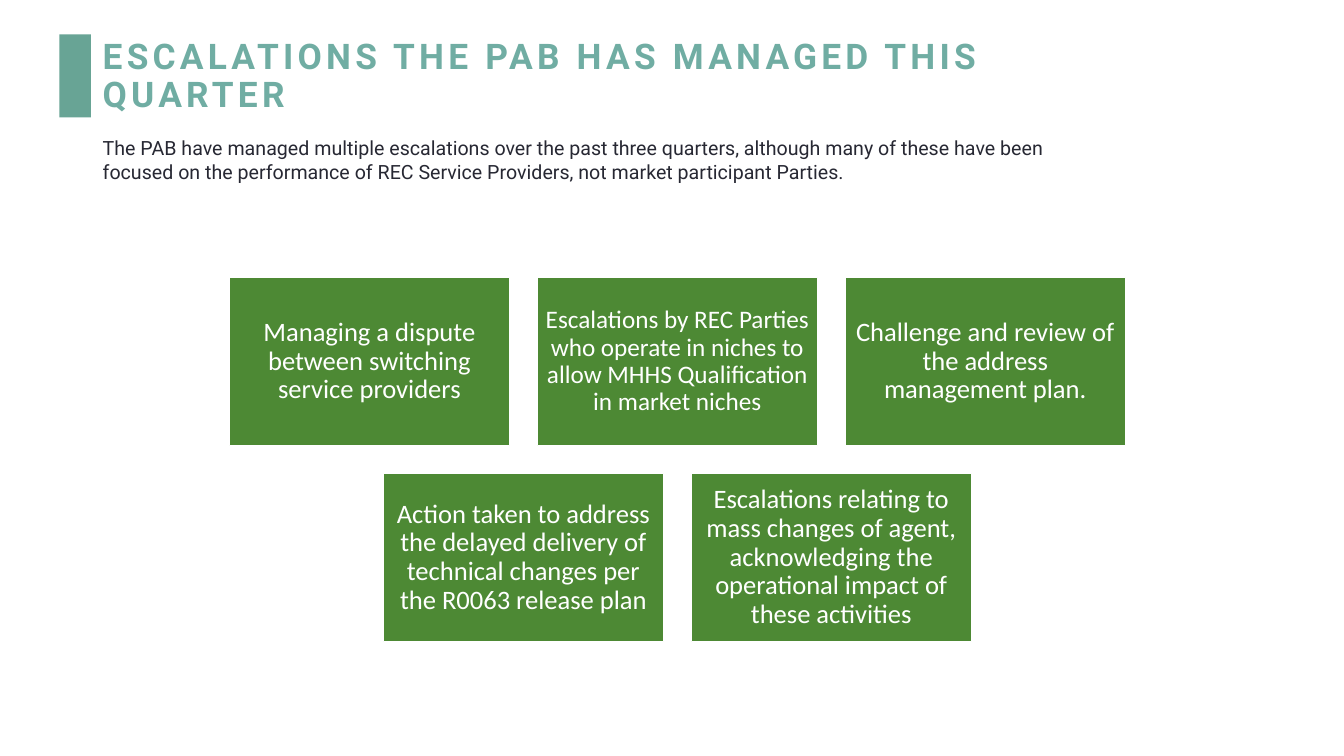
from pptx import Presentation
from pptx.dml.color import RGBColor
from pptx.enum.shapes import MSO_SHAPE
from pptx.enum.text import MSO_ANCHOR, PP_ALIGN
from pptx.util import Cm, Pt


def color(hex_string):
    return RGBColor.from_string(hex_string)


def write_text(shape, text, *, size, font, fill, bold=False, tracking=0, line_spacing=1.0,
               align=PP_ALIGN.LEFT, anchor=MSO_ANCHOR.TOP, inset=None):
    """Fill the shape with one paragraph; tracking is in points, inset in cm."""
    frame = shape.text_frame
    frame.word_wrap = True
    frame.vertical_anchor = anchor
    if inset is not None:
        frame.margin_left = frame.margin_right = Cm(inset)
        frame.margin_top = frame.margin_bottom = Cm(inset)
    paragraph = frame.paragraphs[0]
    paragraph.alignment = align
    paragraph.line_spacing = line_spacing
    run = paragraph.add_run()
    run.text = text
    run.font.size = Pt(size)
    run.font.name = font
    run.font.bold = bold
    run.font.color.rgb = color(fill)
    if tracking:
        run.font._element.set("spc", str(tracking * 100))


presentation = Presentation()
presentation.slide_width = Cm(33.87)
presentation.slide_height = Cm(19.05)
slide = presentation.slides.add_slide(presentation.slide_layouts[6])

# Heading with its accent bar
accent_bar = slide.shapes.add_shape(MSO_SHAPE.RECTANGLE, Cm(1.5), Cm(0.87), Cm(0.79), Cm(2.09))
accent_bar.shadow.inherit = False
accent_bar.fill.solid()
accent_bar.fill.fore_color.rgb = color("68A495")
accent_bar.line.fill.background()

title = slide.shapes.add_textbox(Cm(2.34), Cm(1.02), Cm(25.78), Cm(1.83))
write_text(title, "ESCALATIONS THE PAB HAS MANAGED THIS QUARTER", size=25.2, font="Roboto",
           fill="70ADA3", bold=True, tracking=3, line_spacing=0.9, anchor=MSO_ANCHOR.MIDDLE)

introduction = slide.shapes.add_textbox(Cm(2.34), Cm(3.3), Cm(25.78), Cm(1.45))
write_text(introduction,
           "The PAB have managed multiple escalations over the past three quarters, although many "
           "of these have been focused on the performance of REC Service Providers, not market "
           "participant Parties.",
           size=14, font="Roboto", fill="272833")

# Escalation cards: each row is centred on the same axis
CARD_WIDTH, CARD_HEIGHT, GAP = 7.06, 4.24, 0.7
ROWS_CENTER, ROWS_TOP = 16.93 + 0.14, 6.96 + 0.03
escalation_rows = [
    [("Managing a dispute between switching service providers", 19),
     ("Escalations by REC Parties who operate in niches to allow MHHS Qualification in market "
      "niches", 18),
     ("Challenge and review of the address management plan.", 19)],
    [("Action taken to address the delayed delivery of technical changes per the R0063 release "
      "plan", 19),
     ("Escalations relating to mass changes of agent, acknowledging the operational impact of "
      "these activities", 19)],
]
for row_number, escalations in enumerate(escalation_rows):
    row_width = len(escalations) * (CARD_WIDTH + GAP) - GAP
    row_left = ROWS_CENTER - row_width / 2
    top = ROWS_TOP + row_number * (CARD_HEIGHT + GAP)
    for column, (text, size) in enumerate(escalations):
        left = row_left + column * (CARD_WIDTH + GAP)
        card = slide.shapes.add_shape(MSO_SHAPE.RECTANGLE, Cm(left), Cm(top),
                                      Cm(CARD_WIDTH), Cm(CARD_HEIGHT))
        card.shadow.inherit = False
        card.fill.solid()
        card.fill.fore_color.rgb = color("4D8934")
        card.line.color.rgb = color("FFFFFF")
        card.line.width = Pt(1)
        write_text(card, text, size=size, font="Calibri", fill="FFFFFF", line_spacing=0.9,
                   align=PP_ALIGN.CENTER, anchor=MSO_ANCHOR.MIDDLE, inset=size / 100)

presentation.save("out.pptx")
